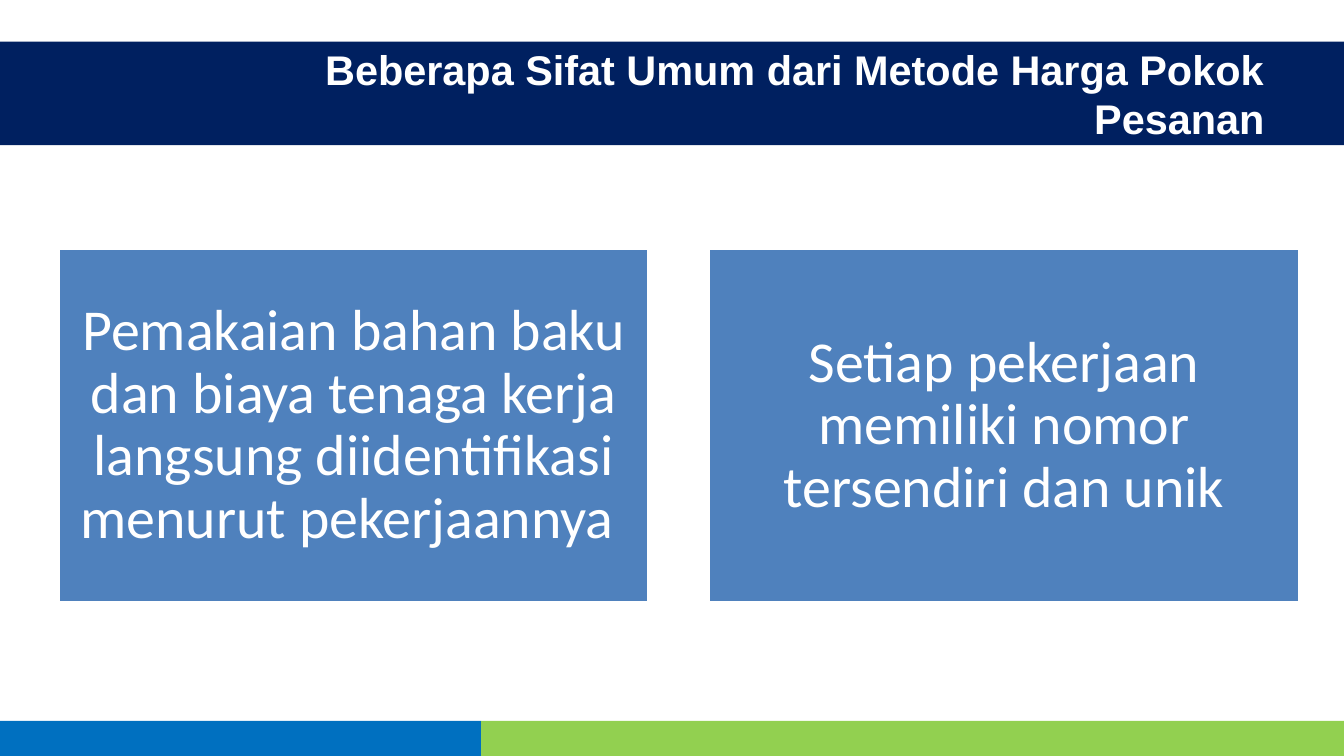
from pptx import Presentation
from pptx.dml.color import RGBColor
from pptx.enum.shapes import MSO_SHAPE
from pptx.enum.text import MSO_ANCHOR, MSO_AUTO_SIZE, PP_ALIGN
from pptx.util import Inches, Pt

WIDE = 10
HIGH = WIDE * 9 / 16
TITLE = "Beberapa Sifat Umum dari Metode Harga Pokok Pesanan"
CARDS = [
    "Pemakaian bahan baku dan biaya tenaga kerja langsung diidentifikasi menurut pekerjaannya ",
    "Setiap pekerjaan memiliki nomor tersendiri dan unik",
]
BAND = (0, 0.31, WIDE, 0.77)
FOOT = 0.26
SPLIT = 3.58
BARS = [
    ("0070C0", (0, HIGH - FOOT, SPLIT, FOOT)),
    ("92D050", (SPLIT, HIGH - FOOT, WIDE - SPLIT, FOOT)),
    ("002060", BAND),
]
LEFT, TOP, CARD_W, CARD_H, GAP = 0.43, 1.85, 4.4, 2.64, 0.44


def color(code):
    return RGBColor.from_string(code)


def add_box(slide, fill, area):
    box = slide.shapes.add_shape(MSO_SHAPE.RECTANGLE, *map(Inches, area))
    box.shadow.inherit = False
    box.fill.solid()
    box.fill.fore_color.rgb = color(fill)
    box.line.fill.background()
    return box


def write(shape, text, face, size, align, inset, bold=False):
    frame = shape.text_frame
    frame.word_wrap = True
    frame.auto_size = MSO_AUTO_SIZE.NONE
    frame.vertical_anchor = MSO_ANCHOR.MIDDLE
    frame.margin_left = frame.margin_right = Inches(inset[0])
    frame.margin_top = frame.margin_bottom = Inches(inset[1])
    para = frame.paragraphs[0]
    para.alignment = align
    para.space_before = Pt(0)
    run = para.add_run()
    run.text = text
    run.font.name = face
    run.font.size = Pt(size)
    run.font.bold = bold
    run.font.color.rgb = color("FFFFFF")
    return para


deck = Presentation()
deck.slide_width, deck.slide_height = Inches(WIDE), Inches(HIGH)
slide = deck.slides.add_slide(deck.slide_layouts[5])

for fill, area in BARS:
    add_box(slide, fill, area)

title = slide.shapes.title
title.left, title.top, title.width, title.height = map(
    Inches, (1.66, BAND[1], 7.85, BAND[3]))
write(title, TITLE, "Arial", 22.2, PP_ALIGN.RIGHT, (0.1, 0.05), True)
tree = slide.shapes._spTree
tree.remove(title._element)
tree.append(title._element)

for col, text in enumerate(CARDS):
    card = add_box(slide, "4F81BD",
                   (LEFT + col * (CARD_W + GAP), TOP, CARD_W, CARD_H))
    card.line.color.rgb = color("FFFFFF")
    card.line.width = Pt(2)
    para = write(card, text, "Calibri", 31, PP_ALIGN.CENTER, (0.13, 0.13))
    para.line_spacing = 0.9

deck.save("out.pptx")
